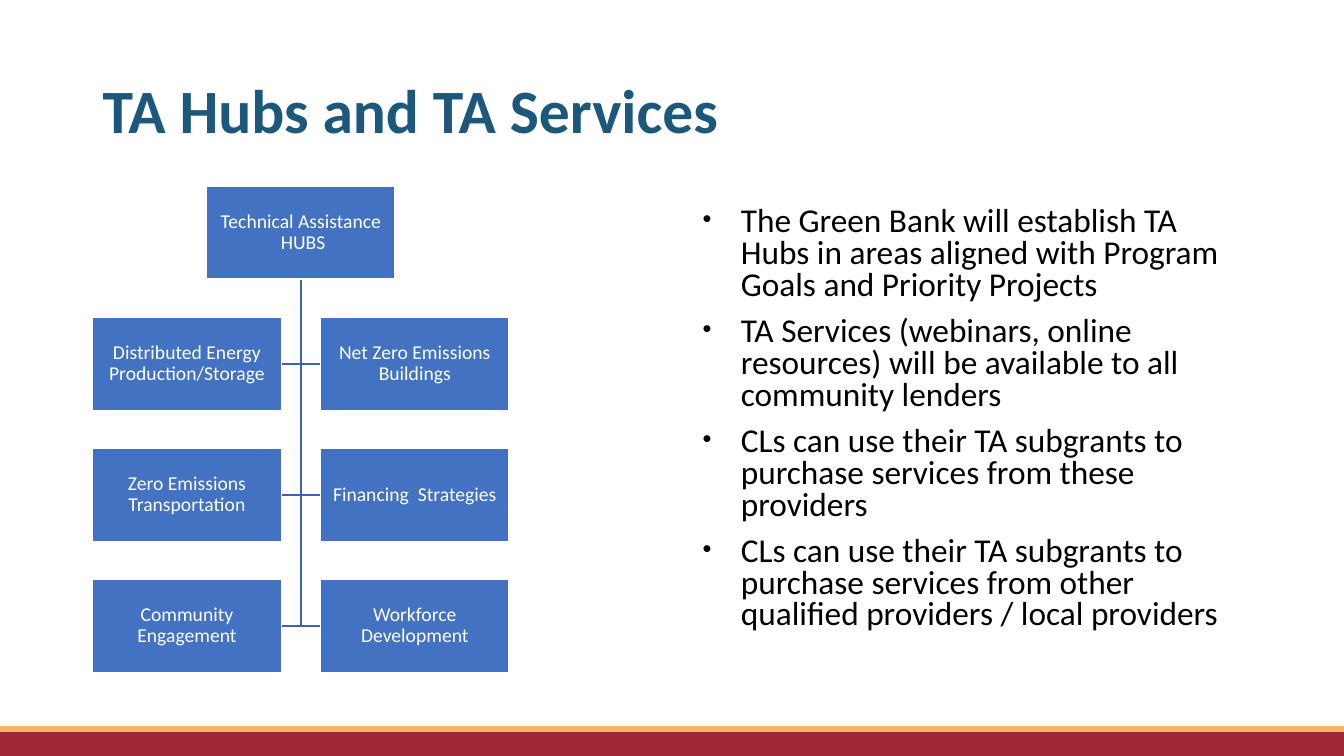
from pptx import Presentation
from pptx.dml.color import RGBColor
from pptx.enum.shapes import MSO_SHAPE
from pptx.enum.text import MSO_ANCHOR, PP_ALIGN
from pptx.oxml.ns import qn
from pptx.util import Inches, Pt
from lxml import etree

RECTANGLE = MSO_SHAPE.RECTANGLE
MIDDLE, TOP = MSO_ANCHOR.MIDDLE, MSO_ANCHOR.TOP
CENTER, LEFT = PP_ALIGN.CENTER, PP_ALIGN.LEFT

TITLE = "TA Hubs and TA Services"
ROOT = ["Technical Assistance", " HUBS"]
HUB_ROWS = [
    (["Distributed Energy Production/Storage"], ["Net Zero Emissions", "Buildings"]),
    (["Zero Emissions Transportation"], ["Financing  Strategies"]),
    (["Community Engagement"], ["Workforce", "Development"]),
]
BULLETS = [
    "The Green Bank will establish TA Hubs in areas aligned with Program Goals and Priority Projects",
    "TA Services (webinars, online resources) will be available to all community lenders",
    "CLs can use their TA subgrants to purchase services from these providers",
    "CLs can use their TA subgrants to purchase services from other qualified providers / local providers",
]
THEME = {
    "font": "Calibri", "title_size": 44, "body_size": 23.8, "hub_size": 14,
    "title": "1B587C", "body": "000000", "hub": "4372C3", "hub_text": "FFFFFF",
    "branch": "3A66B1", "red": "9F2936", "orange": "F9B266",
}

SLIDE_WIDTH, SLIDE_HEIGHT = 13.33, 7.5
HUB_WIDTH, HUB_HEIGHT = 1.87, 0.92
HUB_LEFT, HUB_TOP = 0.92, 1.85
COLUMN_STEP, ROW_STEP = 2.26, 1.3
TRUNK = HUB_LEFT + (COLUMN_STEP + HUB_WIDTH) / 2


def color(name):
    return RGBColor.from_string(THEME[name])


def write(box, lines, kind, text_color, align, anchor, spacing, inset, bold=False):
    frame = box.text_frame
    frame.word_wrap = True
    frame.vertical_anchor = anchor
    frame.margin_left = frame.margin_right = Inches(inset[0])
    frame.margin_top = frame.margin_bottom = Inches(inset[1])
    frame.text = "\n".join(lines)
    for para in frame.paragraphs:
        para.alignment = align
        para.line_spacing = spacing
        for span in para.runs:
            span.font.name = THEME["font"]
            span.font.size = Pt(THEME[kind + "_size"])
            span.font.bold = bold
            span.font.color.rgb = color(text_color)
    return frame


def add_rectangle(page, left, top, width, height, fill, line):
    box = page.shapes.add_shape(
        RECTANGLE, Inches(left), Inches(top), Inches(width), Inches(height))
    box.shadow.inherit = False
    box.fill.solid()
    box.fill.fore_color.rgb = color(fill)
    box.line.color.rgb = color(line)
    box.line.width = Pt(1)
    return box


def add_text_box(page, left, top, width, height):
    return page.shapes.add_textbox(
        Inches(left), Inches(top), Inches(width), Inches(height))


def add_hub(page, lines, left, top):
    box = add_rectangle(page, left, top, HUB_WIDTH, HUB_HEIGHT, "hub", "hub_text")
    write(box, lines, "hub", "hub_text", CENTER, MIDDLE, 0.9, (0.01, 0.01))


def add_branch(page, end_x, end_y):
    start_y = HUB_TOP + HUB_HEIGHT
    builder = page.shapes.build_freeform(Inches(TRUNK), Inches(start_y))
    builder.add_line_segments(
        [(Inches(TRUNK), Inches(end_y)), (Inches(end_x), Inches(end_y))], close=False)
    branch = builder.convert_to_shape()
    branch.shadow.inherit = False
    branch.fill.background()
    branch.line.color.rgb = color("branch")
    branch.line.width = Pt(1)


def add_bullet(para):
    properties = para._p.get_or_add_pPr()
    properties.set("marL", str(Inches(0.5)))
    properties.set("indent", str(Inches(-0.38)))
    bullet_color = etree.SubElement(properties, qn("a:buClr"))
    etree.SubElement(bullet_color, qn("a:srgbClr"), val=THEME["body"])
    etree.SubElement(properties, qn("a:buSzPct"), val="76000")
    etree.SubElement(properties, qn("a:buFont"), typeface="Arial")
    etree.SubElement(properties, qn("a:buChar"), char="•")


def add_hub_chart(page):
    row_tops = [HUB_TOP + ROW_STEP * (row + 1) for row in range(len(HUB_ROWS))]
    for top in reversed(row_tops):
        for end_x in (HUB_LEFT + COLUMN_STEP, HUB_LEFT + HUB_WIDTH):
            add_branch(page, end_x, top + HUB_HEIGHT / 2)
    add_hub(page, ROOT, TRUNK - HUB_WIDTH / 2, HUB_TOP)
    for top, hubs in zip(row_tops, HUB_ROWS):
        for column, lines in enumerate(hubs):
            add_hub(page, lines, HUB_LEFT + column * COLUMN_STEP, top)


def main():
    deck = Presentation()
    deck.slide_width, deck.slide_height = Inches(SLIDE_WIDTH), Inches(SLIDE_HEIGHT)
    page = deck.slides.add_slide(deck.slide_layouts[6])

    add_rectangle(page, 0, 7.25, SLIDE_WIDTH, 0.25, "red", "red")
    add_rectangle(page, 0, 7.21, SLIDE_WIDTH, 0.05, "orange", "orange")

    title = add_text_box(page, 0.92, 0.4, 11.5, 1.45)
    write(title, [TITLE], "title", "title", LEFT, MIDDLE, 0.9, (0.1, 0.05), True)

    body = add_text_box(page, 6.75, 2, 5.67, 4.76)
    frame = write(body, BULLETS, "body", "body", LEFT, TOP, 0.8, (0.1, 0.05))
    for position, para in enumerate(frame.paragraphs):
        para.space_before = Pt(10 if position else 0)
        add_bullet(para)

    add_hub_chart(page)
    deck.save("out.pptx")


if __name__ == "__main__":
    main()
